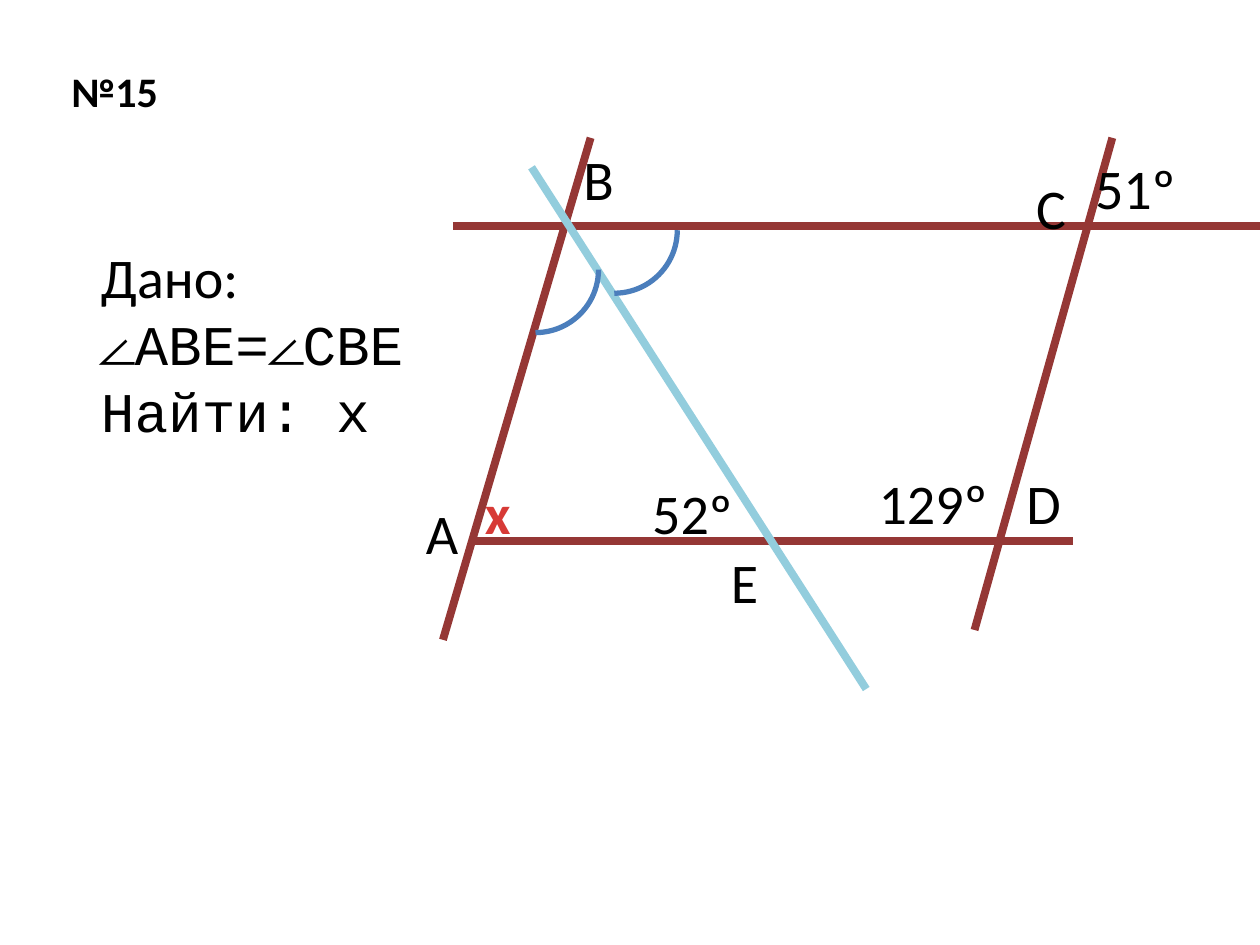
from lxml import etree
from pptx import Presentation
from pptx import util as u
from pptx.dml.color import RGBColor
from pptx.enum import shapes, text
from pptx.oxml.ns import qn

BLACK = RGBColor(0x00, 0x00, 0x00)
RED = RGBColor(0xD7, 0x3A, 0x36)
MAROON = RGBColor(0x95, 0x37, 0x35)
SKY = RGBColor(0x93, 0xCD, 0xDD)
BLUE = RGBColor(0x4B, 0x7E, 0xBC)


class Sketch:
    """Draws on one slide; lengths are cells of a 64 by 48 grid."""

    cell = u.Inches(10) / 64
    body_font, code_font = "Calibri", "Courier New"

    def __init__(self, slide):
        self.shapes = slide.shapes

    def grid(self, *cells):
        return [round(c * self.cell) for c in cells]

    def line(self, start, end, color):
        stroke = self.shapes.add_connector(
            shapes.MSO_CONNECTOR.STRAIGHT, *self.grid(*start, *end))
        stroke.line.color.rgb = color
        stroke.line.width = u.Pt(4.5)
        etree.SubElement(stroke._element.spPr, qn("a:effectLst"))

    def label(self, lines, col, row, width, height=4.1, size=32,
              bold=False, color=BLACK, fonts=(body_font,)):
        box = self.shapes.add_textbox(*self.grid(col, row, width, height))
        frame = box.text_frame
        frame.text = lines
        frame.word_wrap = False
        frame.auto_size = text.MSO_AUTO_SIZE.SHAPE_TO_FIT_TEXT
        for paragraph, name in zip(frame.paragraphs, fonts):
            font = paragraph.runs[0].font
            font.name, font.size, font.bold = name, u.Pt(size), bold
            font.color.rgb = color
        return box

    def outline_text(self, box, color, width):
        properties = box.text_frame.paragraphs[0].runs[0].font._element
        outline = etree.Element(qn("a:ln"), w=str(u.Pt(width)))
        fill = etree.SubElement(outline, qn("a:solidFill"))
        etree.SubElement(fill, qn("a:srgbClr"), val=str(color))
        properties.insert(0, outline)

    def angle_arc(self, col, row, size=6.4):
        arc = self.shapes.add_shape(
            shapes.MSO_SHAPE.ARC, *self.grid(col, row, size, size))
        arc.rotation = 90
        arc.shadow.inherit = False
        arc.fill.background()
        arc.line.color.rgb = BLUE
        arc.line.width = u.Pt(3)


def main():
    deck = Presentation()
    deck.slide_width, deck.slide_height = u.Inches(10), u.Inches(7.5)
    sketch = Sketch(deck.slides.add_slide(deck.slide_layouts[6]))

    # Problem number
    sketch.label("№15", 3, 3, 7.2, height=3.2, size=24, bold=True)

    # Sides of the quadrilateral, then the bisector BE
    for start, end in [((23, 11.5), (64, 11.5)), ((24, 27.5), (54.5, 27.5)),
                       ((56.5, 7), (49.5, 32)), ((30, 7), (22.5, 32.5))]:
        sketch.line(start, end, MAROON)
    sketch.line((27, 8.5), (44, 35), SKY)

    # Vertices and known angles
    for name, col, row, width in [
            ("B", 29, 7, 3.3), ("A", 21, 25, 3.3), ("C", 52, 8.5, 3.3),
            ("D", 51.5, 23.5, 3.5), ("E", 36.5, 27.5, 3.1),
            ("129º", 44, 23.5, 8.3), ("51º", 55, 7.5, 6.5),
            ("52º", 32.5, 24, 6.5)]:
        sketch.label(name, col, row, width)

    # Given and wanted
    sketch.label("Дано:\n∠АВЕ=∠СВЕ\nНайти: x", 4.5, 12, 19, height=14.5,
                 fonts=(sketch.body_font, sketch.code_font, sketch.code_font))

    # Unknown angle
    unknown = sketch.label("x", 24, 24, 3.2, bold=True, color=RED)
    sketch.outline_text(unknown, RED, 1.42)

    # Equal angles at B
    sketch.angle_arc(28, 8.5)
    sketch.angle_arc(24, 10.5)

    deck.save("out.pptx")


if __name__ == "__main__":
    main()
